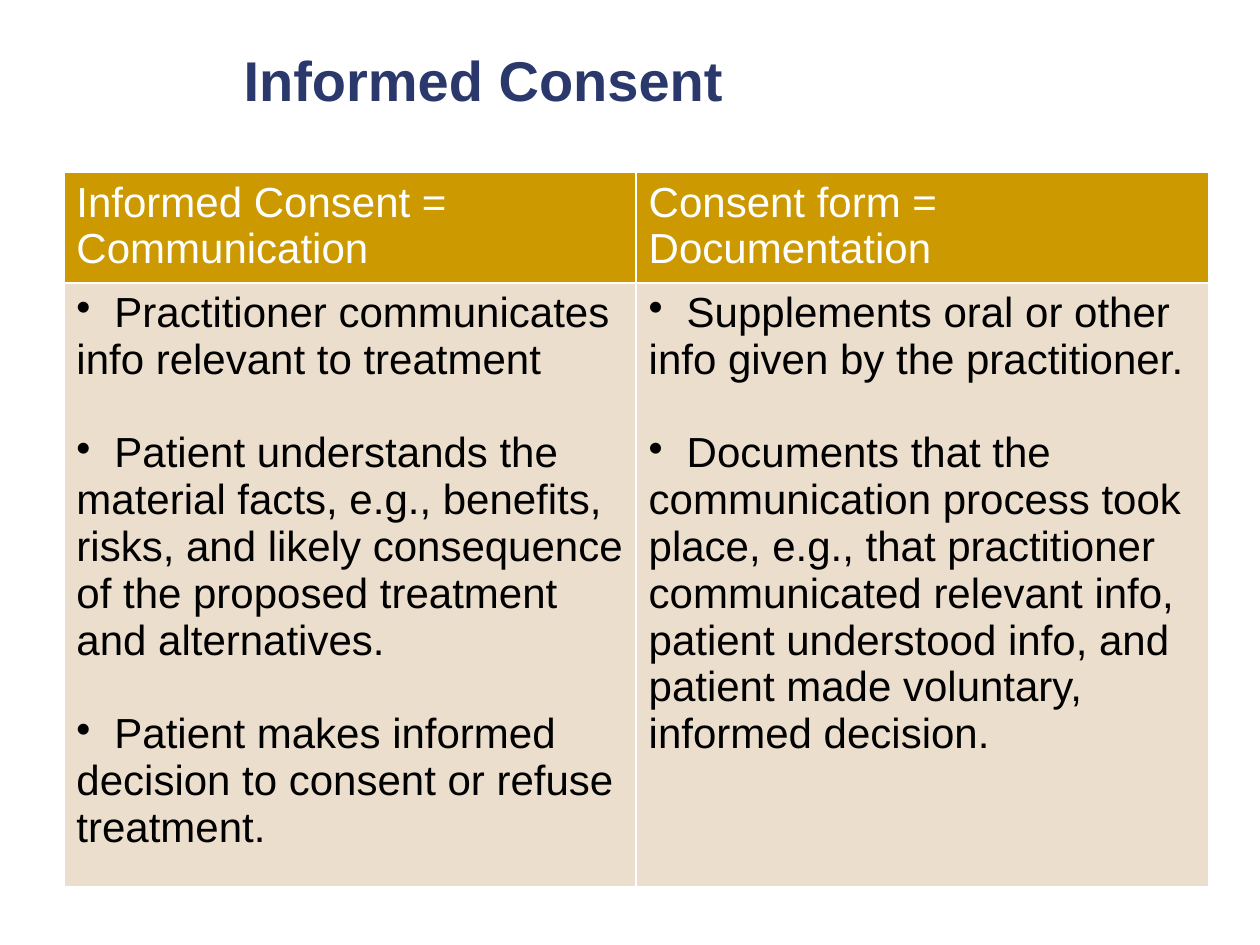
"""Build a slide comparing informed consent with the consent form."""
from dataclasses import dataclass

from lxml import etree
from pptx import Presentation
from pptx import util as u
from pptx.dml import color
from pptx.enum import text
from pptx.oxml import ns

NAVY = color.RGBColor(0x2A, 0x38, 0x6C)
GOLD = color.RGBColor(0xCC, 0x99, 0x00)
SAND = color.RGBColor(0xEC, 0xDE, 0xCC)
WHITE = color.RGBColor(0xFF, 0xFF, 0xFF)
BLACK = color.RGBColor(0x00, 0x00, 0x00)
FONT = "Arial"
BODY_SIZE = u.Pt(24)
ITEM_GAP = u.Pt(26.75)
BULLET_TAB = u.Pt(21.7)


@dataclass
class Column:
    heading: str
    items: list[str]


COLUMNS = [
    Column("Informed Consent = Communication", [
        "Practitioner communicates info relevant to treatment",
        "Patient understands the material facts, e.g., benefits, risks, and "
        "likely consequence of the proposed treatment and alternatives.",
        "Patient makes informed decision to consent or refuse treatment.",
    ]),
    Column("Consent form = Documentation", [
        "Supplements oral or other info given by the practitioner.",
        "Documents that the communication process took place, e.g., that "
        "practitioner communicated relevant info, patient understood info, "
        "and patient made voluntary, informed decision.",
    ]),
]


def set_font(p, size: int, rgb: color.RGBColor, bold: bool = False) -> None:
    """Format every run of a paragraph."""
    for r in p.runs:
        r.font.name = FONT
        r.font.size = size
        r.font.bold = bold
        r.font.color.rgb = rgb


def style_cell(cell, fill: color.RGBColor) -> None:
    """Give a cell white borders and a solid fill."""
    tc_pr = cell._tc.get_or_add_tcPr()
    for side in ("lnL", "lnR", "lnT", "lnB"):
        ln = etree.SubElement(tc_pr, ns.qn(f"a:{side}"), w=str(u.Pt(1)))
        solid = etree.SubElement(ln, ns.qn("a:solidFill"))
        etree.SubElement(solid, ns.qn("a:srgbClr"), val=str(WHITE))
    cell.fill.solid()
    cell.fill.fore_color.rgb = fill


def add_bullet(p) -> None:
    """Add a bullet whose wrapped lines return to the left margin."""
    p_pr = p._p.get_or_add_pPr()
    p_pr.set("marL", "0")
    p_pr.set("indent", "0")
    etree.SubElement(p_pr, ns.qn("a:buChar"), char="•")
    tabs = etree.SubElement(p_pr, ns.qn("a:tabLst"))
    etree.SubElement(tabs, ns.qn("a:tab"), pos=str(BULLET_TAB), algn="l")


def fill_column(table, index: int, column: Column) -> None:
    """Write a heading and its bulleted items into one table column."""
    head, body = table.cell(0, index), table.cell(1, index)
    style_cell(head, GOLD)
    style_cell(body, SAND)
    head.text_frame.text = column.heading
    set_font(head.text_frame.paragraphs[0], BODY_SIZE, WHITE)
    tf = body.text_frame
    for i, item in enumerate(column.items):
        p = tf.add_paragraph() if i else tf.paragraphs[0]
        add_bullet(p)
        if i:
            p.space_before = ITEM_GAP
        p.text = f"\t{item}"
        set_font(p, BODY_SIZE, BLACK)


def main() -> None:
    """Create and save the presentation."""
    prs = Presentation()
    prs.slide_width, prs.slide_height = u.Pt(720), u.Pt(540)
    s = prs.slides.add_slide(prs.slide_layouts[5])

    title = s.shapes.title
    title.left, title.top = u.Pt(132), u.Pt(24)
    title.width, title.height = u.Pt(588), u.Pt(42)
    tf = title.text_frame
    tf.text = "Informed Consent"
    tf.vertical_anchor = text.MSO_ANCHOR.MIDDLE
    tf.paragraphs[0].alignment = text.PP_ALIGN.LEFT
    set_font(tf.paragraphs[0], u.Pt(32), NAVY, bold=True)

    table = s.shapes.add_table(2, len(COLUMNS), u.Pt(36.5), u.Pt(98.7),
                               u.Pt(654), u.Pt(408)).table
    table.horz_banding = False
    table.rows[0].height, table.rows[1].height = u.Pt(63), u.Pt(345)
    for i, column in enumerate(COLUMNS):
        fill_column(table, i, column)

    prs.save("out.pptx")


if __name__ == "__main__":
    main()
